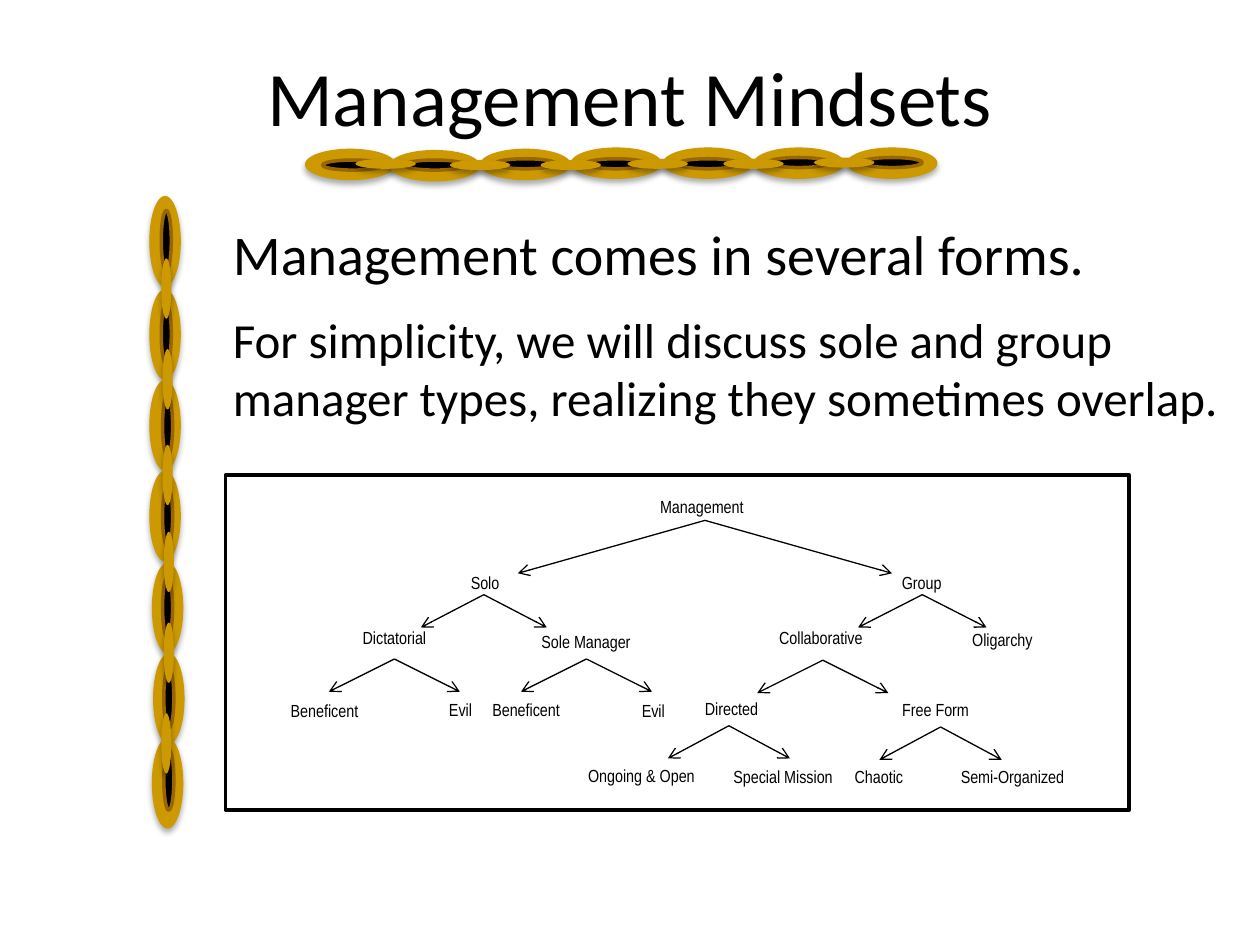
from dataclasses import dataclass
from typing import NamedTuple

from lxml import etree
from pptx import Presentation
from pptx.dml.color import RGBColor
from pptx.enum.shapes import MSO_CONNECTOR, MSO_SHAPE
from pptx.enum.text import MSO_ANCHOR, MSO_AUTO_SIZE, PP_ALIGN
from pptx.oxml.ns import qn
from pptx.util import Inches, Pt

OVAL, RECTANGLE = MSO_SHAPE.OVAL, MSO_SHAPE.RECTANGLE
STRAIGHT = MSO_CONNECTOR.STRAIGHT
LEFT, CENTER = PP_ALIGN.LEFT, PP_ALIGN.CENTER
TOP = MSO_ANCHOR.TOP
NO_FIT, GROW = MSO_AUTO_SIZE.NONE, MSO_AUTO_SIZE.SHAPE_TO_FIT_TEXT

SLIDE_WIDTH, SLIDE_HEIGHT = Inches(10), Inches(7.5)
COLUMN, ROW = SLIDE_WIDTH / 100, SLIDE_HEIGHT / 75
COLORS = {"ink": "000000", "gold": "CC9900", "bronze": "996600"}
LABEL_ROWS = 2.7


class Area(NamedTuple):
    column: float
    row: float
    columns: float
    rows: float

    def emu(self) -> list[int]:
        return [round(self.column * COLUMN), round(self.row * ROW),
                round(self.columns * COLUMN), round(self.rows * ROW)]


@dataclass
class Ring:
    columns: float
    rows: float
    fill: str
    outline: str | None
    shadow: bool


@dataclass
class Chain:
    rotation: int
    links: list[tuple[float, float]]
    holes: list[tuple[float, float]]
    couplings: list[tuple[float, float]]


class Label(NamedTuple):
    text: str
    column: float
    row: float
    columns: float


class Fork(NamedTuple):
    column: float
    row: float
    reach: float
    drop: float = 2.6


LINK = Ring(7.2, 2.5, "gold", None, True)
HOLE = Ring(4.8, 0.8, "ink", "bronze", False)
COUPLING = Ring(4.8, 0.8, "gold", None, True)

CHAINS = [
    Chain(270,
          [(13.1, 19.15), (13.1, 26.55), (13.1, 33.75), (13.1, 40.95),
           (13.3, 48.25), (13.4, 55.45), (13.3, 62.15)],
          [(13.2, 19.1), (13.2, 26.5), (13.3, 33.8), (13.3, 41),
           (13.3, 48.2), (13.4, 55.4), (13.4, 61.9)],
          [(13.2, 22.9), (13.3, 30.1), (13.3, 37.7), (13.4, 44.6),
           (13.4, 51.8), (13.2, 59)]),
    Chain(0,
          [(27.8, 13.05), (34.5, 13.15), (41.7, 13.05), (48.9, 12.95),
           (56.2, 12.95), (63.4, 12.95), (70.8, 12.95)],
          [(28, 13.1), (34.5, 13.1), (41.7, 13), (48.9, 13),
           (56.2, 13), (63.4, 12.9), (70.8, 12.9)],
          [(30.6, 13), (38.1, 13.1), (45.3, 13.1), (52.2, 13),
           (59.8, 13), (67, 12.9)]),
]

LABELS = [
    Label("Management", 50.2, 38.9, 11),
    Label("Solo", 34.1, 44.9, 8.8),
    Label("Group", 66.1, 44.9, 14.1),
    Label("Dictatorial", 26.4, 49.3, 9.8),
    Label("Sole Manager", 38.4, 49.6, 16.2),
    Label("Collaborative", 60, 49.3, 10.3),
    Label("Oligarchy", 75.4, 49.4, 8.3),
    Label("Beneficent", 18.8, 55.1, 13.9),
    Label("Evil", 30.2, 55, 12.7),
    Label("Beneficent", 34.7, 55, 14.1),
    Label("Evil", 48.7, 55.1, 6.3),
    Label("Directed", 49.5, 54.9, 17.1),
    Label("Free Form", 68.5, 55, 11.5),
    Label("Ongoing & Open", 44.5, 60.2, 12.8),
    Label("Special Mission", 54.8, 60.3, 14.7),
    Label("Chaotic", 62.4, 60.3, 14.7),
    Label("Semi-Organized", 72.3, 60.3, 16.1),
]

FORKS = [
    Fork(55.95, 41.3, 14.85, 4.2),
    Fork(38.4, 47.2, 5),
    Fork(73.2, 47.2, 5.1),
    Fork(31.3, 52.3, 5.2),
    Fork(46.55, 52.3, 5.2),
    Fork(65.3, 52.4, 5.2),
    Fork(57.85, 57.6, 4.85),
    Fork(74.65, 57.7, 4.85),
]


def color(name: str) -> RGBColor:
    return RGBColor.from_string(COLORS[name])


def apply(target, values: dict) -> None:
    for name, value in values.items():
        setattr(target, name, value)


def write(para, text: str, size: float, face: str, align) -> None:
    para.alignment = align
    span = para.add_run()
    span.text = text
    apply(span.font, {"size": Pt(size), "name": face})
    span.font.color.rgb = color("ink")


def add_box(page, area: Area):
    box = page.shapes.add_textbox(*area.emu())
    apply(box.text_frame, {"word_wrap": True, "auto_size": GROW})
    return box


def add_ring(page, ring: Ring, center: tuple[float, float], rotation: int) -> None:
    column, row = center
    area = Area(column - ring.columns / 2, row - ring.rows / 2, ring.columns, ring.rows)
    oval = page.shapes.add_shape(OVAL, *area.emu())
    oval.rotation = rotation
    oval.shadow.inherit = False
    oval.fill.solid()
    oval.fill.fore_color.rgb = color(ring.fill)
    if ring.outline:
        oval.line.color.rgb = color(ring.outline)
        oval.line.width = Pt(2)
    else:
        oval.line.fill.background()
    if ring.shadow:
        effects = oval._element.spPr.find(qn("a:effectLst"))
        shadow = etree.SubElement(effects, qn("a:outerShdw"), blurRad=str(Pt(3.5)),
                                  dist=str(Pt(2.2)), dir="5400000", rotWithShape="0")
        shade = etree.SubElement(shadow, qn("a:srgbClr"), val=COLORS["ink"])
        etree.SubElement(shade, qn("a:alpha"), val="32000")


def add_chain(page, chain: Chain) -> None:
    for ring, centers in ((LINK, chain.links), (HOLE, chain.holes),
                          (COUPLING, chain.couplings)):
        for center in centers:
            add_ring(page, ring, center, chain.rotation)


def add_fork(page, fork: Fork) -> None:
    for side in (-1, 1):
        start_x, start_y, reach, drop = Area(
            fork.column, fork.row, side * fork.reach, fork.drop).emu()
        arrow = page.shapes.add_connector(
            STRAIGHT, start_x, start_y, start_x + reach, start_y + drop)
        arrow.line.color.rgb = color("ink")
        arrow.line.width = Pt(0.75)
        etree.SubElement(arrow.line._get_or_add_ln(), qn("a:tailEnd"), type="arrow")
        etree.SubElement(arrow._element.spPr, qn("a:effectLst"))


def main() -> None:
    deck = Presentation()
    apply(deck, {"slide_width": SLIDE_WIDTH, "slide_height": SLIDE_HEIGHT})
    page = deck.slides.add_slide(deck.slide_layouts[5])

    title = page.shapes.title
    apply(title, dict(zip(("left", "top", "width", "height"), Area(0, 3, 100, 12.5).emu())))
    apply(title.text_frame, {"vertical_anchor": TOP, "auto_size": NO_FIT,
                             "word_wrap": True, "margin_top": Inches(0.09)})
    write(title.text_frame.paragraphs[0], "Management Mindsets", 44, "Calibri", CENTER)

    for chain in CHAINS:
        add_chain(page, chain)

    body = add_box(page, Area(17.5, 16.9, 82.5, 17.6)).text_frame
    write(body.paragraphs[0], "Management comes in several forms.", 32, "Calibri", LEFT)
    detail = body.add_paragraph()
    detail.space_before = Pt(13)
    write(detail, "For simplicity, we will discuss sole and group manager types, "
          "realizing they sometimes overlap.", 28, "Calibri", LEFT)

    for label in LABELS:
        box = add_box(page, Area(label.column, label.row, label.columns, LABEL_ROWS))
        write(box.text_frame.paragraphs[0], label.text, 10, "Arial Narrow", CENTER)
    for fork in FORKS:
        add_fork(page, fork)

    frame = page.shapes.add_shape(RECTANGLE, *Area(17.9, 37.7, 71.7, 26.6).emu())
    frame.shadow.inherit = False
    frame.fill.background()
    frame.line.color.rgb = color("ink")
    frame.line.width = Pt(2)

    deck.save("out.pptx")


if __name__ == "__main__":
    main()
